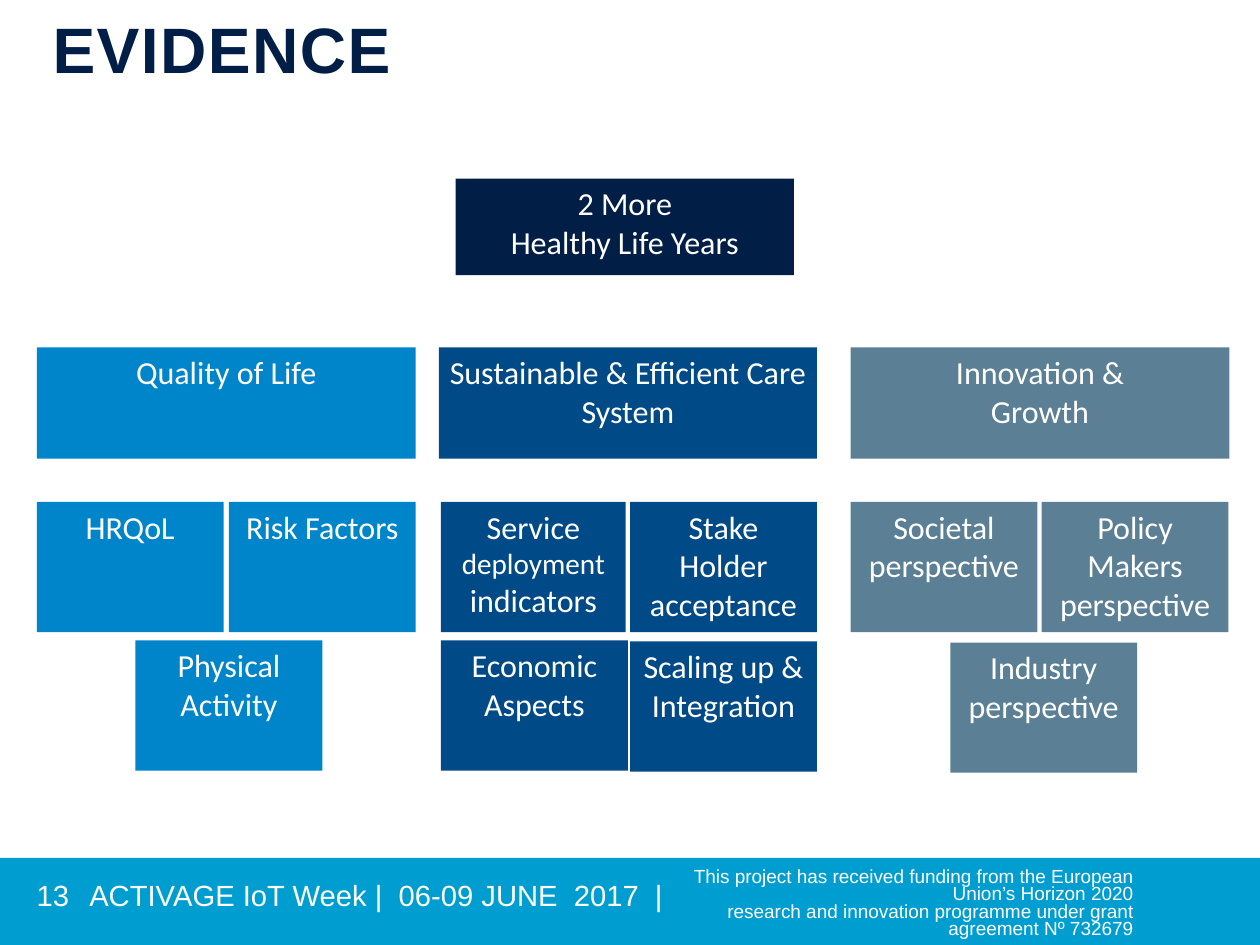
from pptx import Presentation
from pptx.dml.color import RGBColor
from pptx.enum.shapes import MSO_SHAPE as Shape
from pptx.enum.text import MSO_ANCHOR as Anchor, MSO_AUTO_SIZE as AutoSize, PP_ALIGN as Align
from pptx.util import Inches, Pt

COLORS = {
    "white": "FFFFFF", "navy": "001E46", "footer": "009ED0",
    "life": "0085CA", "care": "004B87", "growth": "5B7F95",
}
TITLE_ONLY = 5
HEADING_TOP, HEADING_HEIGHT = 3.31, 1.06
ITEM_TOP, ITEM_WIDTH, ITEM_HEIGHT = 4.78, 1.78, 1.24

# Each paragraph is a string, or a list of (text, size) spans
# Column: colour, left, width, heading, items as (left, top, paragraphs, width)
COLUMNS = [
    ("life", 0.35, 3.61, ["Quality of Life"], [
        (0.35, ITEM_TOP, ["HRQoL"], ITEM_WIDTH),
        (2.18, ITEM_TOP, ["Risk Factors"], ITEM_WIDTH),
        (1.29, 6.1, ["Physical", "Activity"], ITEM_WIDTH),
    ]),
    ("care", 4.18, 3.6, ["Sustainable & Efficient Care System"], [
        (4.2, ITEM_TOP, [[("Service ", 22), ("deployment ", 20), ("indicators", 22)]], 1.76),
        (6, ITEM_TOP, ["Stake", "Holder acceptance"], ITEM_WIDTH),
        (4.2, 6.1, ["Economic Aspects"], ITEM_WIDTH),
        (6, 6.11, ["Scaling up & Integration"], ITEM_WIDTH),
    ]),
    ("growth", 8.1, 3.61, ["Innovation &", "Growth"], [
        (8.1, ITEM_TOP, ["Societal", "perspective"], ITEM_WIDTH),
        (9.92, ITEM_TOP, ["Policy Makers", "perspective"], ITEM_WIDTH),
        (9.05, 6.12, ["Industry", "perspective"], ITEM_WIDTH),
    ]),
]
FUNDING = [
    "This project has received funding from the European Union’s Horizon 2020",
    "research and innovation programme under grant agreement Nº 732679",
]


def color(name):
    return RGBColor.from_string(COLORS[name])


def apply(target, values):
    for name, value in values.items():
        setattr(target, name, value)


class SlideBuilder:
    """Holds the text style and the current slide."""

    block_font = {"name": "Calibri", "size": Pt(22)}
    footer_font = {"name": "Arial", "size": Pt(20)}
    title_font = {"name": "Arial", "size": Pt(44), "bold": True}
    no_margins = dict.fromkeys(
        ("margin_left", "margin_right", "margin_top", "margin_bottom"), 0)

    def __init__(self, slide):
        self.slide = slide

    def add_text(self, frame, paragraphs, font, ink="white", **layout):
        for index, content in enumerate(paragraphs):
            para = frame.paragraphs[0] if index == 0 else frame.add_paragraph()
            apply(para, layout)
            spans = [(content, None)] if isinstance(content, str) else content
            for text, size in spans:
                span = para.add_run()
                span.text = text
                apply(span.font, font)
                span.font.color.rgb = color(ink)
                if size:
                    span.font.size = Pt(size)

    def title(self, text, *place):
        box = self.slide.shapes.title
        apply(box, dict(zip(("left", "top", "width", "height"), map(Inches, place))))
        frame = box.text_frame
        apply(frame, {**self.no_margins, "vertical_anchor": Anchor.TOP,
                      "auto_size": AutoSize.NONE, "word_wrap": True})
        self.add_text(frame, [text], self.title_font, "navy",
                      alignment=Align.LEFT, line_spacing=Pt(24))
        # Letter spacing of one point
        frame.paragraphs[0].runs[0].font._element.set("spc", "100")

    def block(self, fill, place, paragraphs=()):
        box = self.slide.shapes.add_shape(Shape.RECTANGLE, *map(Inches, place))
        box.shadow.inherit = False
        box.fill.solid()
        box.fill.fore_color.rgb = color(fill)
        box.line.fill.background()
        apply(box.text_frame, {"vertical_anchor": Anchor.TOP, "word_wrap": True})
        self.add_text(box.text_frame, paragraphs, self.block_font, alignment=Align.CENTER)

    def label(self, place, paragraphs, size=20, alignment=Align.LEFT):
        frame = self.slide.shapes.add_textbox(*map(Inches, place)).text_frame
        apply(frame, {**self.no_margins, "vertical_anchor": Anchor.MIDDLE,
                      "word_wrap": True})
        self.add_text(frame, paragraphs, {**self.footer_font, "size": Pt(size)},
                      alignment=alignment, line_spacing=Pt(12))


def main():
    deck = Presentation()
    apply(deck, {"slide_width": Inches(12), "slide_height": Inches(9)})
    page = SlideBuilder(deck.slides.add_slide(deck.slide_layouts[TITLE_ONLY]))

    # Footer band
    page.block("footer", (0, 8.17, 12, 0.83))
    page.label((6.52, 8.44, 4.27, 0.35), FUNDING, 13, Align.RIGHT)
    page.label((0.35, 8.48, 0.5, 0.25), ["13"])
    page.label((0.85, 8.48, 7.25, 0.25), ["ACTIVAGE IoT Week |  06-09 JUNE  2017  |"])

    # Title and overall goal
    page.title("EVIDENCE", 0.5, 0.49, 11, 0.35)
    page.block("navy", (4.34, 1.7, 3.22, 0.92), ["2 More", "Healthy Life Years"])

    # Three columns of evidence
    for fill, left, width, heading, items in COLUMNS:
        page.block(fill, (left, HEADING_TOP, width, HEADING_HEIGHT), heading)
        for item_left, top, paragraphs, item_width in items:
            page.block(fill, (item_left, top, item_width, ITEM_HEIGHT), paragraphs)

    deck.save("out.pptx")


if __name__ == "__main__":
    main()
